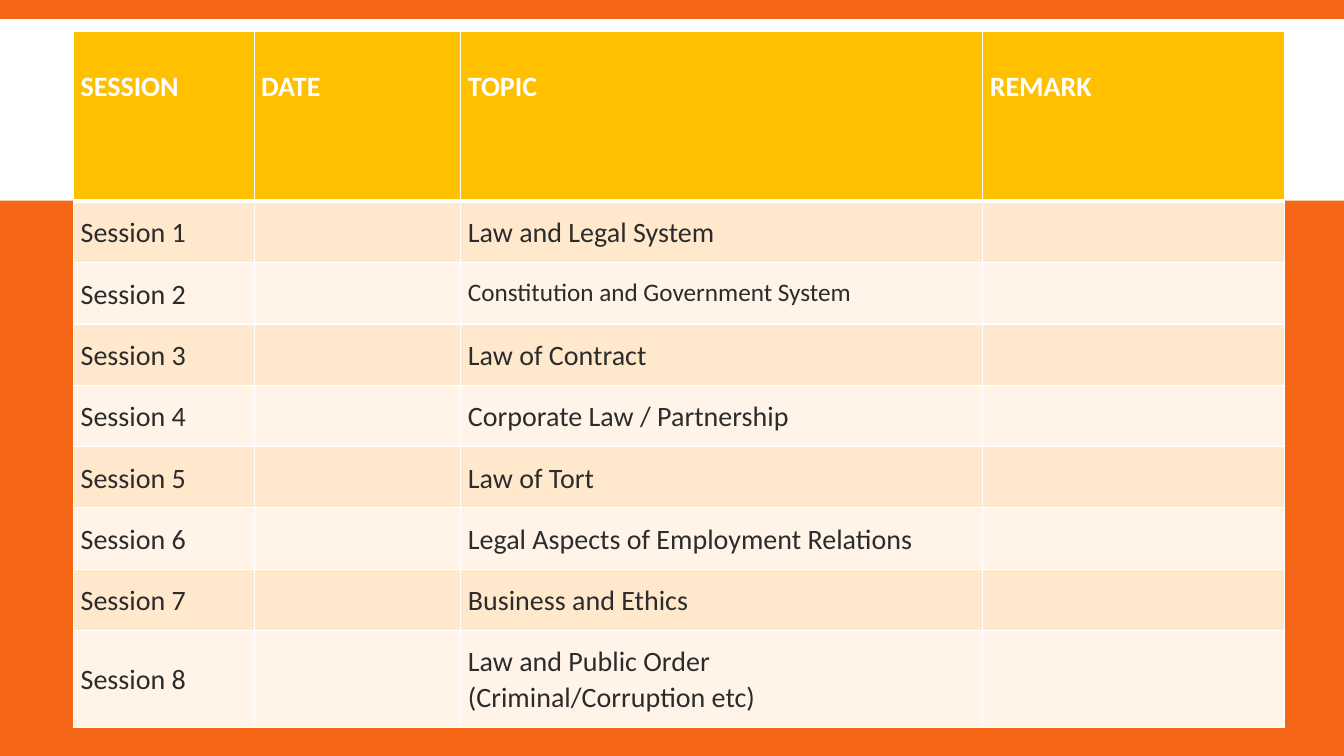
"""Build the course schedule slide: a table of eight sessions over a white band."""
from dataclasses import dataclass

from lxml import etree
from pptx import Presentation
from pptx import util as u
from pptx.dml.color import RGBColor
from pptx.enum import shapes, text
from pptx.oxml import ns
from pptx.table import _Cell

ORANGE = RGBColor(0xF5, 0x66, 0x17)
WHITE = RGBColor(0xFF, 0xFF, 0xFF)
AMBER = RGBColor(0xFF, 0xC0, 0x00)
PEACH = RGBColor(0xFF, 0xE8, 0xCC)
CREAM = RGBColor(0xFF, 0xF4, 0xE7)
INK = RGBColor(0x2C, 0x2C, 0x2C)

COLUMN_WIDTHS = (128.9, 147.7, 372.8, 215.3)
HEADER_HEIGHT, ROW_HEIGHT, LAST_HEIGHT = 121.5, 43.8, 69.1
HEADINGS = ("SESSION", "DATE", "TOPIC", "REMARK")


@dataclass(frozen=True)
class Session:
    topic: str
    size: float = 20
    spacing: float = 1.07
    height: float = ROW_HEIGHT


@dataclass(frozen=True)
class CellStyle:
    fill: RGBColor
    color: RGBColor
    bold: bool = False
    anchor: text.MSO_ANCHOR = text.MSO_ANCHOR.MIDDLE
    top_inset: float = 0
    top_line: float = 1
    bottom_line: float = 1


SESSIONS = (
    Session("Law and Legal System"),
    Session("Constitution and Government System", size=18, spacing=1),
    Session("Law of Contract"),
    Session("Corporate Law / Partnership"),
    Session("Law of Tort"),
    Session("Legal Aspects of Employment Relations"),
    Session("Business and Ethics"),
    Session("Law and Public Order\n(Criminal/Corruption etc)", height=LAST_HEIGHT),
)
HEADER_STYLE = CellStyle(AMBER, WHITE, bold=True, anchor=text.MSO_ANCHOR.TOP,
                         top_inset=26, bottom_line=3)


def add_border(cell: _Cell, side: str, width: float) -> None:
    properties = cell._tc.get_or_add_tcPr()
    line = etree.SubElement(properties, ns.qn(f"a:ln{side}"), w=str(u.Pt(width)))
    fill = etree.SubElement(line, ns.qn("a:solidFill"))
    etree.SubElement(fill, ns.qn("a:srgbClr"), val=str(WHITE))


def fill_cell(cell: _Cell, words: str, style: CellStyle,
              size: float = 20, spacing: float = 1.07) -> None:
    for side, width in (("L", 1), ("R", 1), ("T", style.top_line), ("B", style.bottom_line)):
        add_border(cell, side, width)
    cell.fill.solid()
    cell.fill.fore_color.rgb = style.fill
    cell.vertical_anchor = style.anchor
    cell.margin_left = cell.margin_right = u.Pt(5.04)
    cell.margin_top, cell.margin_bottom = u.Pt(style.top_inset), u.Pt(0)
    cell.text = words
    for para in cell.text_frame.paragraphs:
        para.line_spacing = spacing
        para.font.name = "Calibri"
        para.font.size = u.Pt(size)
        para.font.bold = style.bold
        para.font.color.rgb = style.color


def main() -> None:
    deck = Presentation()
    deck.slide_width, deck.slide_height = u.Pt(960), u.Pt(540)
    page = deck.slides.add_slide(deck.slide_layouts[6])
    page.background.fill.solid()
    page.background.fill.fore_color.rgb = ORANGE

    band = page.shapes.add_shape(shapes.MSO_SHAPE.RECTANGLE,
                                 u.Pt(0), u.Pt(13.7), u.Pt(960), u.Pt(129.6))
    band.shadow.inherit = False
    band.fill.solid()
    band.fill.fore_color.rgb = WHITE
    band.line.fill.background()

    heights = (HEADER_HEIGHT, *(session.height for session in SESSIONS))
    frame = page.shapes.add_table(len(heights), len(COLUMN_WIDTHS), u.Pt(52.6), u.Pt(22.3),
                                  u.Pt(sum(COLUMN_WIDTHS)), u.Pt(sum(heights)))
    schedule = frame.table
    schedule.horz_banding = False
    for column, width in zip(schedule.columns, COLUMN_WIDTHS):
        column.width = u.Pt(width)
    for row, height in zip(schedule.rows, heights):
        row.height = u.Pt(height)

    for index, heading in enumerate(HEADINGS):
        fill_cell(schedule.cell(0, index), heading, HEADER_STYLE)
    for number, session in enumerate(SESSIONS, start=1):
        style = CellStyle(PEACH if number % 2 else CREAM, INK,
                          top_line=3 if number == 1 else 1)
        fill_cell(schedule.cell(number, 0), f"Session {number}", style)
        fill_cell(schedule.cell(number, 1), "", style)
        fill_cell(schedule.cell(number, 2), session.topic, style, session.size, session.spacing)
        fill_cell(schedule.cell(number, 3), "", style)

    deck.save("out.pptx")


if __name__ == "__main__":
    main()
